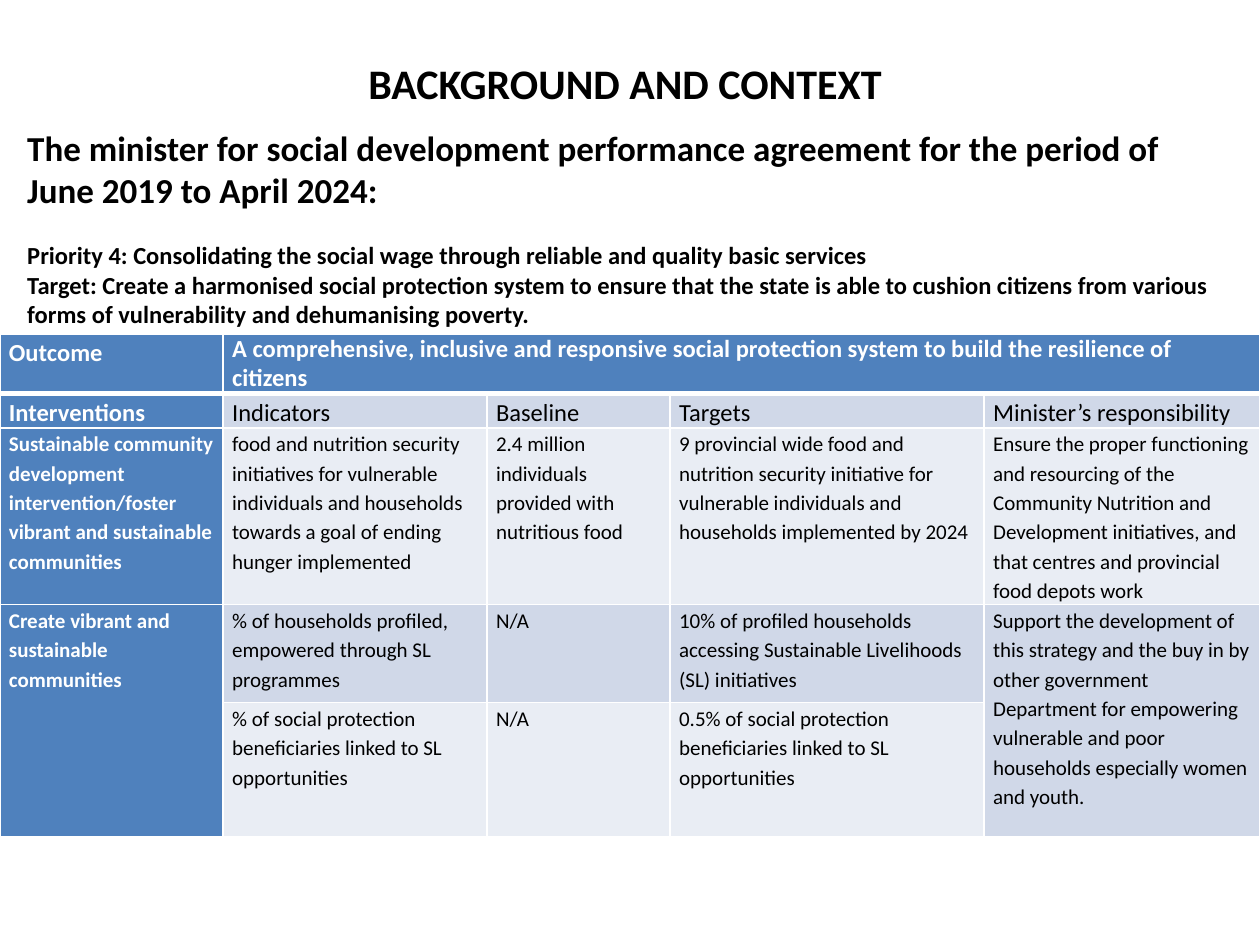
import pptx
import pptx.dml.color
import pptx.enum.text
import pptx.oxml
import pptx.oxml.ns
import pptx.util
from pptx.util import Cm, Pt

BLACK = pptx.dml.color.RGBColor(0x00, 0x00, 0x00)
WHITE = pptx.dml.color.RGBColor(0xFF, 0xFF, 0xFF)
BLUE = pptx.dml.color.RGBColor(0x4F, 0x81, 0xBD)
BAND_DARK = pptx.dml.color.RGBColor(0xD0, 0xD8, 0xE8)
BAND_LIGHT = pptx.dml.color.RGBColor(0xE9, 0xED, 0xF4)

TITLE = "BACKGROUND AND CONTEXT"
AGREEMENT = ("The minister for social development performance agreement "
             "for the period of June 2019 to April 2024:")
PRIORITY = "Priority 4: Consolidating the social wage through reliable and quality basic services"
TARGET = ("Target: Create a harmonised social protection system to ensure that the state is able "
          "to cushion citizens from various forms of vulnerability and dehumanising poverty.")

COLUMN_WIDTHS = [4.5, 5.32, 3.69, 6.33, 5.56]
ROW_HEIGHTS = [1.19, 0.64, 3.56, 1.98, 2.7]
ROW_BANDS = [BLUE, BAND_DARK, BAND_LIGHT, BAND_DARK, BAND_LIGHT]
MERGES = [((0, 1), (0, 4)), ((3, 0), (4, 0)), ((3, 4), (4, 4))]
OUTCOME_PLAN = [
    ["Outcome",
     "A comprehensive, inclusive and responsive social protection system to build "
     "the resilience of citizens", "", "", ""],
    ["Interventions", "Indicators", "Baseline", "Targets", "Minister’s responsibility"],
    ["Sustainable community development intervention/foster vibrant and sustainable communities",
     "food and nutrition security initiatives for vulnerable individuals and households "
     "towards a goal of ending hunger implemented",
     "2.4 million individuals provided with nutritious food",
     "9 provincial wide food and nutrition security initiative for vulnerable individuals "
     "and households implemented by 2024",
     "Ensure the proper functioning and resourcing of the Community Nutrition and Development "
     "initiatives, and that centres and provincial food depots work"],
    ["Create vibrant and sustainable communities",
     "% of households profiled, empowered through SL programmes",
     "N/A",
     "10% of profiled households accessing Sustainable Livelihoods (SL) initiatives",
     "Support the development of this strategy and the buy in by other government Department "
     "for empowering vulnerable and poor households especially women and youth."],
    ["",
     "% of social protection beneficiaries linked to SL opportunities",
     "N/A",
     "0.5% of social protection beneficiaries linked to SL opportunities", ""],
]


def apply_format(target, values):
    for name, value in values.items():
        setattr(target, name, value)


class SlideBuilder:
    font_name = "Calibri"
    cell_format = {"margin_left": Cm(0.18), "margin_right": Cm(0.18),
                   "margin_top": 0, "margin_bottom": 0}
    cell_spacing = {"line_spacing": 1.15, "space_after": Pt(10)}

    def __init__(self, slide):
        self.slide = slide

    def fill_paragraph(self, paragraph, text, size, color=BLACK, bold=True, spacing=None):
        paragraph.text = text
        apply_format(paragraph, spacing or {})
        apply_format(paragraph.font, {"name": self.font_name, "size": Pt(size), "bold": bold})
        paragraph.font.color.rgb = color

    def text_box(self, left, top, width, height, lines):
        """Each line is (text, size, paragraph format)."""
        box = self.slide.shapes.add_textbox(Cm(left), Cm(top), Cm(width), Cm(height))
        frame = box.text_frame
        apply_format(frame, {"word_wrap": True,
                             "vertical_anchor": pptx.enum.text.MSO_ANCHOR.MIDDLE})
        for index, (text, size, spacing) in enumerate(lines):
            paragraph = frame.add_paragraph() if index else frame.paragraphs[0]
            self.fill_paragraph(paragraph, text, size, spacing=spacing)

    def borders(self, cell, widths):
        """Draws white left, right, top and bottom borders, widths in points."""
        properties = cell._tc.get_or_add_tcPr()
        for side, width in zip("LRTB", widths):
            properties.append(pptx.oxml.parse_xml(
                f'<a:ln{side} {pptx.oxml.ns.nsdecls("a")} w="{Pt(width)}">'
                f'<a:solidFill><a:srgbClr val="{WHITE}"/></a:solidFill></a:ln{side}>'))

    def cell(self, cell, text, row, column):
        heading = row == 0 or column == 0
        self.borders(cell, (1, 1, 3 if row == 1 else 1, 3 if row == 0 else 1))
        apply_format(cell, self.cell_format)
        cell.fill.solid()
        cell.fill.fore_color.rgb = BLUE if heading else ROW_BANDS[row]
        if text:
            self.fill_paragraph(cell.text_frame.paragraphs[0], text, 14 if row < 2 else 12,
                                WHITE if heading else BLACK, heading,
                                None if (row, column) == (0, 1) else self.cell_spacing)

    def table(self, left, top, widths, heights, rows, merges):
        table = self.slide.shapes.add_table(
            len(heights), len(widths), Cm(left), Cm(top),
            Cm(sum(widths)), Cm(sum(heights))).table
        for column, width in zip(table.columns, widths):
            column.width = Cm(width)
        for row, height in zip(table.rows, heights):
            row.height = Cm(height)
        for first, last in merges:
            table.cell(*first).merge(table.cell(*last))
        for row, texts in enumerate(rows):
            for column, text in enumerate(texts):
                self.cell(table.cell(row, column), text, row, column)


def main():
    presentation = pptx.Presentation()
    apply_format(presentation, {"slide_width": Cm(25.4), "slide_height": Cm(19.05)})
    builder = SlideBuilder(presentation.slides.add_slide(presentation.slide_layouts[6]))
    builder.table(0, 6.73, COLUMN_WIDTHS, ROW_HEIGHTS, OUTCOME_PLAN, MERGES)
    builder.text_box(1.17, 0.8, 22.86, 1.75,
                     [(TITLE, 24, {"alignment": pptx.enum.text.PP_ALIGN.CENTER})])
    builder.text_box(0.3, 2.4, 24.8, 4.38, [
        (AGREEMENT, 20, None),
        (PRIORITY, 14, {"space_before": Pt(17)}),
        (TARGET, 14, None),
    ])
    presentation.save("out.pptx")


if __name__ == "__main__":
    main()
